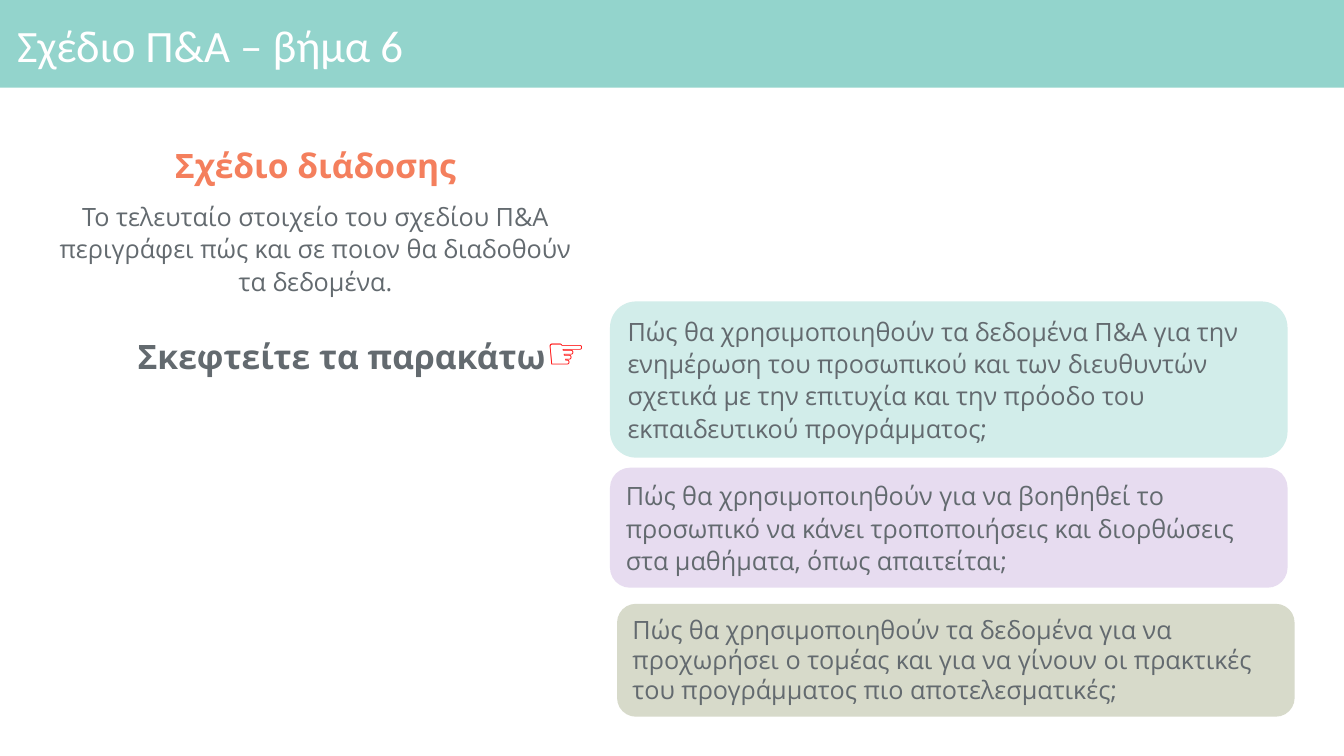
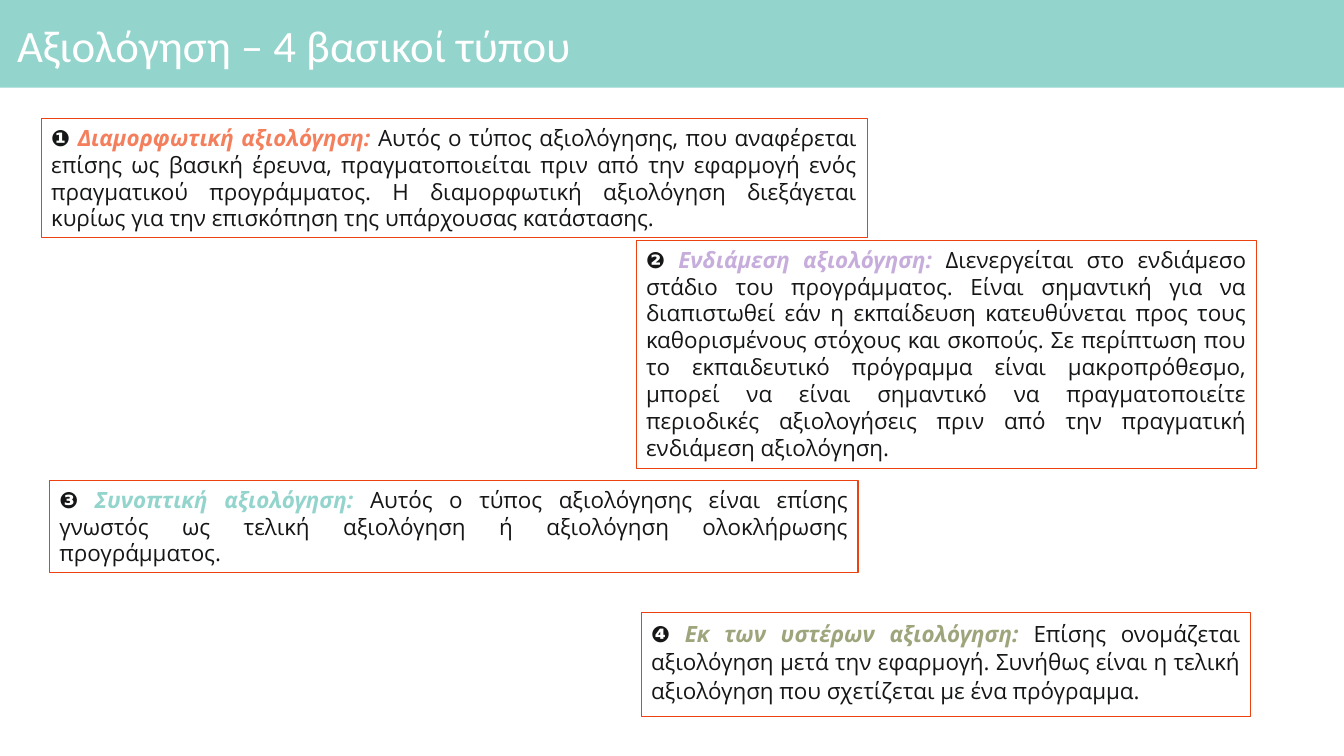
from pptx import Presentation
from pptx import util as u
from pptx.dml import color
from pptx.enum import shapes, text

TEAL, CORAL, LILAC, OLIVE = "93D4CC", "F47F5D", "C7ADDB", "9DA57C"
GREY, INK, WHITE, RED, BORDER = "636A6F", "151617", "FFFFFF", "FF0000", "EC4110"
ALIGN = text.PP_ALIGN
GROW = text.MSO_AUTO_SIZE.SHAPE_TO_FIT_TEXT


def rgb(value):
    return color.RGBColor.from_string(value)


class Deck:
    font = "Open Sans"
    title_font = "Calibri"

    def __init__(self):
        self.presentation = Presentation()
        self.presentation.slide_width = u.Inches(13.33)
        self.presentation.slide_height = u.Inches(7.5)
        self.slide = None

    def add_slide(self, title):
        layout = self.presentation.slide_layouts[6]
        self.slide = self.presentation.slides.add_slide(layout)
        self.box((0, 0, 13.33, 0.87), fill=TEAL)
        frame = self.text_box((0.11, 0.09, 13.06, 0.78), inset=(0.06, 0.06))
        frame.vertical_anchor = text.MSO_ANCHOR.MIDDLE
        heading = {"size": u.Pt(32), "name": self.title_font, "color": WHITE}
        self.paragraph(frame, [(title, heading)], line_spacing=0.9)

    def prepare(self, frame, inset=(0.1, 0.05)):
        horizontal, vertical = map(u.Inches, inset)
        settings = {
            "word_wrap": True,
            "vertical_anchor": text.MSO_ANCHOR.TOP,
            "margin_left": horizontal,
            "margin_right": horizontal,
            "margin_top": vertical,
            "margin_bottom": vertical,
        }
        for name, value in settings.items():
            setattr(frame, name, value)
        return frame

    def text_box(self, place, inset=(0.1, 0.05)):
        shape = self.slide.shapes.add_textbox(*map(u.Inches, place))
        return self.prepare(shape.text_frame, inset)

    def box(self, place, fill=None, line=None, rounded=False):
        kind = shapes.MSO_SHAPE.ROUNDED_RECTANGLE if rounded else shapes.MSO_SHAPE.RECTANGLE
        shape = self.slide.shapes.add_shape(kind, *map(u.Inches, place))
        shape.shadow.inherit = False
        if fill:
            shape.fill.solid()
            shape.fill.fore_color.rgb = rgb(fill)
        else:
            shape.fill.background()
        if line:
            shape.line.color.rgb = rgb(line)
            shape.line.width = u.Pt(0.75)
        else:
            shape.line.fill.background()
        return self.prepare(shape.text_frame)

    def paragraph(self, frame, runs, **layout):
        first = frame.paragraphs[0]
        paragraph = frame.add_paragraph() if first.runs else first
        for name, value in {"alignment": ALIGN.LEFT, **layout}.items():
            setattr(paragraph, name, value)
        for content, style in runs:
            run = paragraph.add_run()
            run.text = content
            values = {"name": self.font, **style}
            run.font.color.rgb = rgb(values.pop("color"))
            for name, value in values.items():
                setattr(run.font, name, value)

    def card(self, place, fill, content, line_spacing):
        frame = self.box(place, fill=fill, rounded=True)
        frame.auto_size = GROW
        style = {"size": u.Pt(18), "color": GREY}
        self.paragraph(frame, [(content, style)], line_spacing=line_spacing)

    def definition(self, place, number, term, accent, content, line_spacing):
        frame = self.box(place, line=BORDER)
        plain = {"size": u.Pt(16), "color": INK}
        strong = {**plain, "bold": True, "italic": True}
        runs = [
            (f"{number} ", strong),
            (f"{term}: ", {**strong, "color": accent}),
            (content, plain),
        ]
        self.paragraph(frame, runs, alignment=ALIGN.JUSTIFY, line_spacing=line_spacing)


CARDS = [
    ((6.05, 2.99, 6.72, 1.55), "D2EDEA",
     "Πώς θα χρησιμοποιηθούν τα δεδομένα Π&Α για την ενημέρωση του προσωπικού "
     "και των διευθυντών σχετικά με την επιτυχία και την πρόοδο του "
     "εκπαιδευτικού προγράμματος;", 1.07),
    ((6.05, 4.64, 6.72, 1.19), "E7DCF0",
     "Πώς θα χρησιμοποιηθούν για να βοηθηθεί το προσωπικό να κάνει "
     "τροποποιήσεις και διορθώσεις στα μαθήματα, όπως απαιτείται;", 1.07),
    ((6.12, 5.99, 6.72, 1.12), "D7DACA",
     "Πώς θα χρησιμοποιηθούν τα δεδομένα για να προχωρήσει ο τομέας και για να "
     "γίνουν οι πρακτικές του προγράμματος πιο αποτελεσματικές;", 1.0),
]

DEFINITIONS = [
    ((0.41, 1.18, 8.19, 1.18), "❶", "Διαμορφωτική αξιολόγηση", CORAL,
     "Αυτός ο τύπος αξιολόγησης, που αναφέρεται επίσης ως βασική έρευνα, "
     "πραγματοποιείται πριν από την εφαρμογή ενός πραγματικού προγράμματος. "
     "Η διαμορφωτική αξιολόγηση διεξάγεται κυρίως για την επισκόπηση της "
     "υπάρχουσας κατάστασης.", 1.0),
    ((6.31, 2.39, 6.15, 2.26), "❷", "Ενδιάμεση αξιολόγηση", LILAC,
     "Διενεργείται στο ενδιάμεσο στάδιο του προγράμματος. Είναι σημαντική για "
     "να διαπιστωθεί εάν η εκπαίδευση κατευθύνεται προς τους καθορισμένους "
     "στόχους και σκοπούς. Σε περίπτωση που το εκπαιδευτικό πρόγραμμα είναι "
     "μακροπρόθεσμο, μπορεί να είναι σημαντικό να πραγματοποιείτε περιοδικές "
     "αξιολογήσεις πριν από την πραγματική ενδιάμεση αξιολόγηση.", 1.0),
    ((0.49, 4.77, 8.02, 0.91), "❸", "Συνοπτική αξιολόγηση", TEAL,
     "Αυτός ο τύπος αξιολόγησης είναι επίσης γνωστός ως τελική αξιολόγηση ή "
     "αξιολόγηση ολοκλήρωσης προγράμματος.", 1.0),
    ((6.36, 6.08, 6.04, 1.03), "❹", "Εκ των υστέρων αξιολόγηση", OLIVE,
     "Επίσης ονομάζεται αξιολόγηση μετά την εφαρμογή. Συνήθως είναι η τελική "
     "αξιολόγηση που σχετίζεται με ένα πρόγραμμα.", 1.07),
]


def dissemination_slide(deck):
    deck.add_slide("Σχέδιο Π&Α – βήμα 6")
    frame = deck.text_box((0.35, 1.36, 5.56, 2.54))
    heading = {"size": u.Pt(24), "bold": True, "color": CORAL}
    body = {"size": u.Pt(18), "color": GREY}
    pointer = {"size": u.Pt(32), "color": RED, "bold": True}
    deck.paragraph(frame, [("Σχέδιο διάδοσης", heading)],
                   alignment=ALIGN.CENTER, line_spacing=1.07)
    deck.paragraph(frame, [("Το τελευταίο στοιχείο του σχεδίου Π&Α περιγράφει πώς "
                            "και σε ποιον θα διαδοθούν τα δεδομένα.", body)],
                   alignment=ALIGN.CENTER, line_spacing=1.07, space_before=u.Pt(10))
    deck.paragraph(frame, [("Σκεφτείτε τα παρακάτω", {**heading, "color": GREY}),
                           ("☞", pointer)],
                   alignment=ALIGN.RIGHT, line_spacing=1.07, space_before=u.Pt(18))
    for card in CARDS:
        deck.card(*card)


def evaluation_slide(deck):
    deck.add_slide("Αξιολόγηση – 4 βασικοί τύπου")
    for definition in DEFINITIONS:
        deck.definition(*definition)


def main():
    deck = Deck()
    dissemination_slide(deck)
    evaluation_slide(deck)
    deck.presentation.save("out.pptx")


if __name__ == "__main__":
    main()
